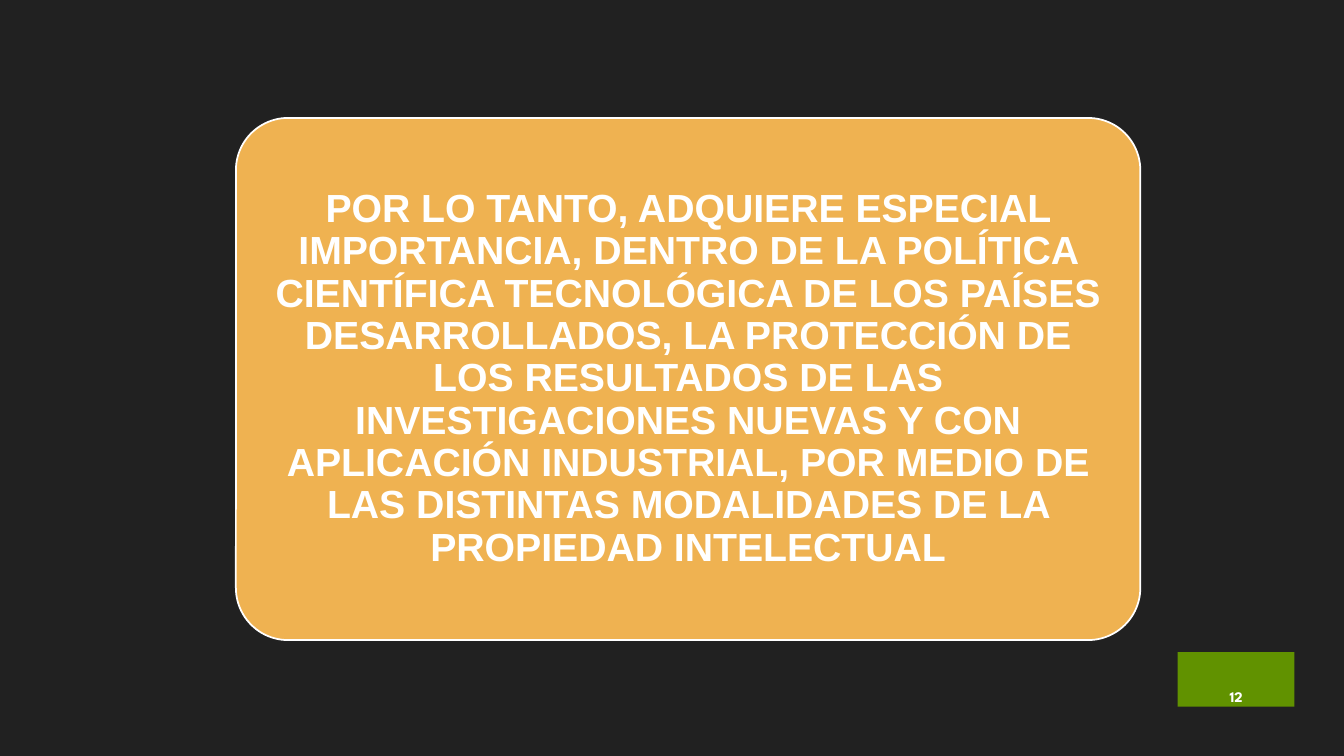
import pptx
import pptx.util
import pptx.dml.color
import pptx.enum.shapes
import pptx.enum.text

Inches = pptx.util.Inches
Pt = pptx.util.Pt
Shape = pptx.enum.shapes.MSO_SHAPE
Anchor = pptx.enum.text.MSO_ANCHOR


def paint(target, color):
    target.solid()
    target.fore_color.rgb = pptx.dml.color.RGBColor.from_string(color)


def add_box(kind, place, color, text, font, size, anchor, insets):
    box = slide.shapes.add_shape(kind, *[Inches(v) for v in place])
    box.shadow.inherit = False
    paint(box.fill, color)
    box.line.fill.background()
    frame = box.text_frame
    frame.word_wrap = True
    frame.vertical_anchor = anchor
    (frame.margin_left, frame.margin_top,
     frame.margin_right, frame.margin_bottom) = [Inches(v) for v in insets]
    para = frame.paragraphs[0]
    para.text = text
    para.alignment = pptx.enum.text.PP_ALIGN.CENTER
    para.font.name = font
    para.font.size = Pt(size)
    para.font.bold = True
    paint(para.font.fill, "FFFFFF")
    return box


deck = pptx.Presentation()
deck.slide_width = Inches(13.33)
deck.slide_height = Inches(7.5)
slide = deck.slides.add_slide(deck.slide_layouts[6])
paint(slide.background.fill, "212121")

# Page number
add_box(Shape.RECTANGLE, (11.68, 6.47, 1.16, 0.54), "619200",
        "12", "League Spartan", 10.5, Anchor.BOTTOM, (0.1, 0.05, 0.1, 0.01))

# Statement card
message = (
    "POR LO TANTO, ADQUIERE ESPECIAL IMPORTANCIA, DENTRO DE LA POLÍTICA "
    "CIENTÍFICA TECNOLÓGICA DE LOS PAÍSES DESARROLLADOS, LA PROTECCIÓN DE "
    "LOS RESULTADOS DE LAS INVESTIGACIONES NUEVAS Y CON APLICACIÓN "
    "INDUSTRIAL, POR MEDIO DE LAS DISTINTAS MODALIDADES DE LA PROPIEDAD "
    "INTELECTUAL"
)
card = add_box(Shape.ROUNDED_RECTANGLE, (2.34, 1.17, 8.97, 5.18), "EFB251",
               message, "Arial", 28, Anchor.MIDDLE, [0.12] * 4)
card.adjustments[0] = 0.1
paint(card.line.fill, "FFFFFF")
card.line.width = Pt(1.25)
card.text_frame.paragraphs[0].line_spacing = 0.9

deck.save("out.pptx")
